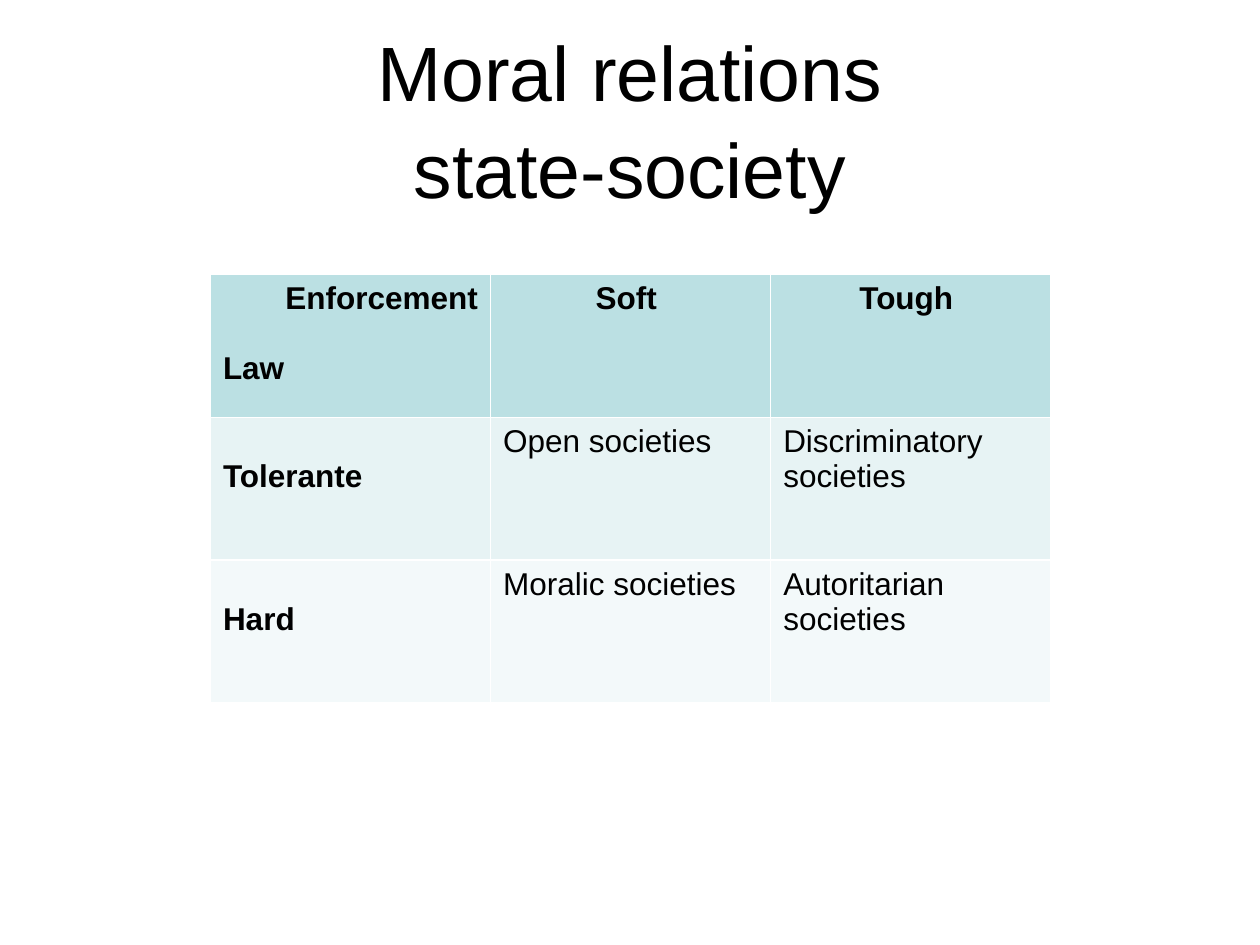
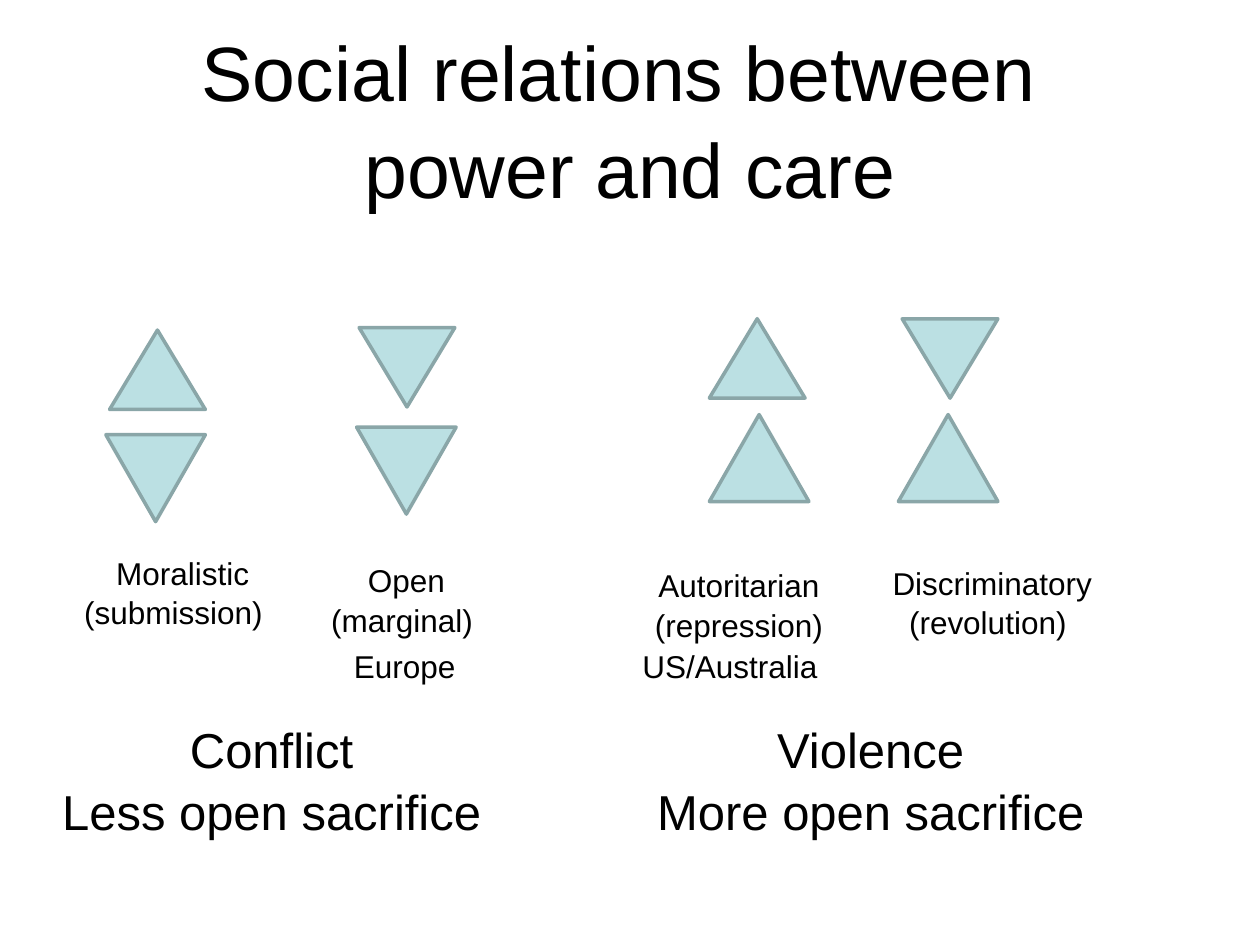
from dataclasses import dataclass

from pptx import Presentation
from pptx.dml.color import RGBColor
from pptx.enum.shapes import MSO_SHAPE
from pptx.enum.text import MSO_ANCHOR, MSO_AUTO_SIZE, PP_ALIGN
from pptx.util import Inches, Pt


@dataclass(frozen=True)
class Theme:
    font: str = "Arial"
    text: str = "000000"
    accent: str = "BBE0E3"
    outline: str = "8AA6A8"
    row_fills: tuple = ("BBE0E3", "E7F3F4", "F3F9FA")
    title_size: int = 44
    caption_size: int = 28
    label_size: int = 18
    line_width: int = 2
    line_spacing: float = 1.05


LEFT, CENTER, RIGHT = PP_ALIGN.LEFT, PP_ALIGN.CENTER, PP_ALIGN.RIGHT
GRID_STEP = 0.1
COLUMNS, ROWS = 100, 75
TITLE_ONLY = 5


def grid(*steps):
    return [Inches(step * GRID_STEP) for step in steps]


def write(frame, lines, theme, size, aligns=(CENTER,), bold=False, spacing=None, gap=0):
    for index, line in enumerate(lines):
        para = frame.paragraphs[0] if index == 0 else frame.add_paragraph()
        para.text = line
        para.alignment = aligns[min(index, len(aligns) - 1)]
        para.line_spacing = spacing
        para.space_before = Pt(gap if index else 0)
        para.space_after = Pt(0)
        for span in para.runs:
            span.font.name = theme.font
            span.font.size = Pt(size)
            span.font.bold = bold
            span.font.color.rgb = RGBColor.from_string(theme.text)


class Builder:
    def __init__(self, theme):
        self.theme = theme
        self.deck = Presentation()
        self.deck.slide_width, self.deck.slide_height = grid(COLUMNS, ROWS)
        self.page = None

    def start(self, title):
        self.page = self.deck.slides.add_slide(self.deck.slide_layouts[TITLE_ONLY])
        box = self.page.shapes.title
        box.left, box.top, box.width, box.height = grid(5, 3, 90, 12.5)
        frame = box.text_frame
        frame.auto_size = MSO_AUTO_SIZE.NONE
        frame.vertical_anchor = MSO_ANCHOR.MIDDLE
        write(frame, [title], self.theme, self.theme.title_size,
              spacing=self.theme.line_spacing)

    def text(self, place, lines, size=None, aligns=(CENTER,)):
        box = self.page.shapes.add_textbox(*grid(*place))
        frame = box.text_frame
        frame.word_wrap = True
        frame.auto_size = MSO_AUTO_SIZE.SHAPE_TO_FIT_TEXT
        write(frame, lines, self.theme, size or self.theme.label_size, aligns,
              spacing=self.theme.line_spacing)

    def triangle(self, place, points_up):
        shape = self.page.shapes.add_shape(MSO_SHAPE.ISOSCELES_TRIANGLE, *grid(*place))
        shape.rotation = 0 if points_up else 180
        shape.shadow.inherit = False
        shape.fill.solid()
        shape.fill.fore_color.rgb = RGBColor.from_string(self.theme.accent)
        shape.line.color.rgb = RGBColor.from_string(self.theme.outline)
        shape.line.width = Pt(self.theme.line_width)

    def table(self, place, rows):
        table = self.page.shapes.add_table(len(rows), len(rows[0]), *grid(*place)).table
        for row_index, row in enumerate(rows):
            for column_index, lines in enumerate(row):
                cell = table.cell(row_index, column_index)
                cell.fill.solid()
                cell.fill.fore_color.rgb = RGBColor.from_string(self.theme.row_fills[row_index])
                header, side = row_index == 0, column_index == 0
                if side and not header:
                    cell.margin_top = Inches(0.33)
                if header:
                    aligns = (RIGHT, LEFT) if side else (CENTER,)
                else:
                    aligns = (LEFT,)
                write(cell.text_frame, lines, self.theme, self.theme.label_size,
                      aligns, bold=header or side, gap=20)


def moral_relations(builder):
    builder.start("Moral relations\vstate-society")
    builder.table((16.7, 21.8, 66.7, 34), [
        [["Enforcement", "Law"], ["Soft "], ["Tough "]],
        [["Tolerante"], ["Open societies"], ["Discriminatory societies"]],
        [["Hard"], ["Moralic societies"], ["Autoritarian societies"]],
    ])


def social_relations(builder):
    builder.start("Social relations between \vpower and care")
    power_size, care_size = (7.6, 6.3), (7.9, 6.9)
    societies = [
        ((8.7, 26.2), True, (8.4, 34.5), False),
        ((28.5, 26), False, (28.3, 33.9), False),
        ((56.3, 25.3), True, (56.3, 32.9), True),
        ((71.6, 25.3), False, (71.3, 32.9), True),
    ]
    for power, power_up, care, care_up in societies:
        builder.triangle(power + power_size, power_up)
        builder.triangle(care + care_size, care_up)

    builder.text((5.7, 43.3, 17.6, 7.1), ["Moralistic", "(submission)"], aligns=(CENTER, LEFT))
    builder.text((25, 43.9, 14.5, 7.1), ["Open (marginal) "])
    builder.text((50.8, 44.3, 15.7, 7.1), ["Autoritarian", "(repression)"])
    builder.text((68.2, 44.1, 21.1, 7.1), ["Discriminatory", "(revolution) "])
    builder.text((27.1, 50.7, 10.2, 4), ["Europe"], aligns=(LEFT,))
    builder.text((50, 50.7, 17.3, 4), ["US/Australia"], aligns=(LEFT,))

    for left, width, lines in (
        (3.7, 35.7, ["Conflict", "Less open sacrifice"]),
        (50.9, 36.4, ["Violence", "More open sacrifice"]),
    ):
        builder.text((left, 56.4, width, 10.4), lines, size=builder.theme.caption_size)


def main():
    builder = Builder(Theme())
    moral_relations(builder)
    social_relations(builder)
    builder.deck.save("out.pptx")


if __name__ == "__main__":
    main()
